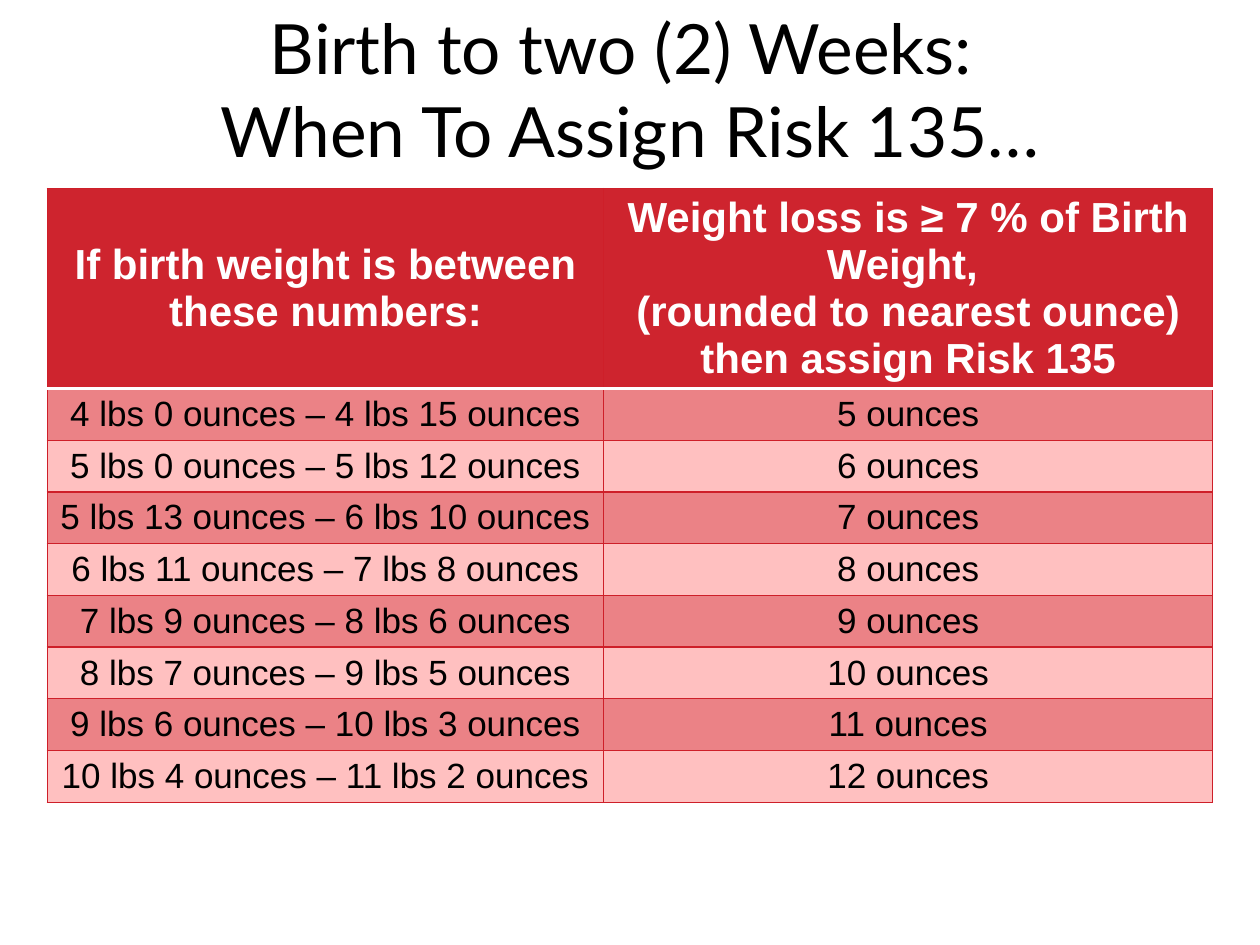
from lxml import etree
from pptx import Presentation
from pptx.dml.color import RGBColor
from pptx.enum import text
from pptx.oxml import ns
from pptx.util import Pt

COLORS = {
    "ink": "000000",
    "white": "FFFFFF",
    "header": "CE242E",
    "border": "CE1F29",
    "dark_band": "EB8286",
    "light_band": "FFC0C0",
}

HEADER = [
    "If birth weight is between these numbers:",
    "Weight loss is ≥ 7 % of Birth Weight, \n"
    "(rounded to nearest ounce) then assign Risk 135",
]
WEIGHT_RANGES = [
    "4 lbs 0 ounces – 4 lbs 15 ounces",
    "5 lbs 0 ounces – 5 lbs 12 ounces",
    "5 lbs 13 ounces – 6 lbs 10 ounces",
    "6 lbs 11 ounces – 7 lbs 8 ounces",
    "7 lbs 9 ounces – 8 lbs 6 ounces",
    "8 lbs 7 ounces – 9 lbs 5 ounces",
    "9 lbs 6 ounces – 10 lbs 3 ounces",
    "10 lbs 4 ounces – 11 lbs 2 ounces",
]
FIRST_LOSS = 5  # ounces; each range adds one


def write_text(frame, content, *, size, font, color, bold=False):
    """Fill a text frame with centred, formatted paragraphs."""
    frame.text = content
    frame.word_wrap = True
    for para in frame.paragraphs:
        para.alignment = text.PP_ALIGN.CENTER
        for span in para.runs:
            span.font.size = Pt(size)
            span.font.name = font
            span.font.bold = bold
            span.font.color.rgb = RGBColor.from_string(COLORS[color])


def set_border(cell, side, color, width):
    """Draw one side (L, R, T or B) of a table cell."""
    props = cell._tc.get_or_add_tcPr()
    line = etree.SubElement(props, ns.qn(f"a:ln{side}"), w=str(Pt(width)))
    fill = etree.SubElement(line, ns.qn("a:solidFill"))
    etree.SubElement(fill, ns.qn("a:srgbClr"), val=COLORS[color])


def style_cell(cell, row, fill):
    """Set borders first, then the fill, as the schema orders them."""
    rule = ("white", 2)
    thin = ("border", 0.75)
    set_border(cell, "L", *thin)
    set_border(cell, "R", *thin)
    set_border(cell, "T", *(rule if row == 1 else thin))
    set_border(cell, "B", *(rule if row == 0 else thin))
    cell.fill.solid()
    cell.fill.fore_color.rgb = RGBColor.from_string(COLORS[fill])


def add_title(page, left, top, width, height):
    title = page.shapes.title
    title.left, title.top = Pt(left), Pt(top)
    title.width, title.height = Pt(width), Pt(height)
    write_text(title.text_frame,
               "Birth to two (2) Weeks: \vWhen To Assign Risk 135…",
               size=39.6, font="Lato", color="ink")
    title.text_frame.auto_size = text.MSO_AUTO_SIZE.NONE
    title.text_frame.vertical_anchor = text.MSO_ANCHOR.MIDDLE


def add_risk_table(page, left, top, width, height):
    rows = [HEADER] + [[weights, f"{FIRST_LOSS + step} ounces"]
                       for step, weights in enumerate(WEIGHT_RANGES)]
    table = page.shapes.add_table(len(rows), 2, Pt(left), Pt(top),
                                  Pt(width), Pt(height)).table
    first_column, header_height = 318, 114.4
    table.columns[0].width = Pt(first_column)
    table.columns[1].width = Pt(width - first_column)
    row_height = (height - header_height) / len(WEIGHT_RANGES)

    for row, values in enumerate(rows):
        is_header = row == 0
        table.rows[row].height = Pt(header_height if is_header else row_height)
        band = "dark_band" if row % 2 else "light_band"
        for column, value in enumerate(values):
            cell = table.cell(row, column)
            style_cell(cell, row, "header" if is_header else band)
            write_text(cell.text_frame, value, font="Arial",
                       size=24 if is_header else 20,
                       color="white" if is_header else "ink", bold=is_header)
            if is_header:
                cell.vertical_anchor = text.MSO_ANCHOR.MIDDLE


def main():
    deck = Presentation()
    deck.slide_width, deck.slide_height = Pt(720), Pt(540)
    page = deck.slides.add_slide(deck.slide_layouts[5])
    add_title(page, 12, 0.5, 696, 99.5)
    add_risk_table(page, 27, 107.7, 666, 350.8)
    deck.save("out.pptx")


if __name__ == "__main__":
    main()
